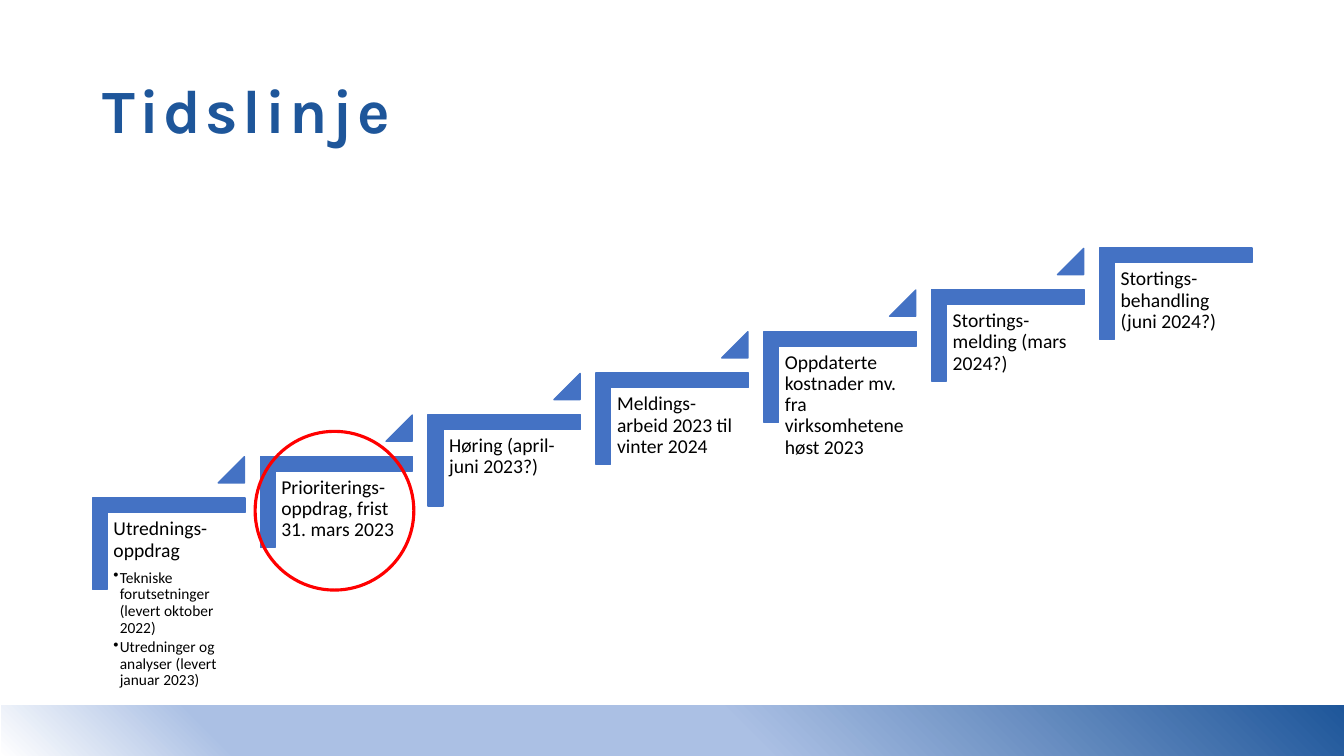
from lxml import etree
from pptx import Presentation
from pptx import util as u
from pptx.dml.color import RGBColor
from pptx.enum import shapes, text
from pptx.oxml import ns

COLORS = {"navy": "1E569A", "pale": "ABC0E4", "white": "FFFFFF",
          "step": "4472C4", "text": "000000", "highlight": "FF0000"}

STEPS = [
    ("Utrednings-oppdrag", ["Tekniske forutsetninger (levert oktober 2022)",
                            "Utredninger og analyser (levert januar 2023)"]),
    ("Prioriterings-oppdrag, frist 31. mars 2023", []),
    ("Høring (april-juni 2023?)", []),
    ("Meldings-arbeid 2023 til vinter 2024", []),
    ("Oppdaterte kostnader mv. fra virksomhetene høst 2023", []),
    ("Stortings-melding (mars 2024?)", []),
    ("Stortings-behandling (juni 2024?)", []),
]
STEP_RIGHT, STEP_UP = 4.23, 1.05  # cm from one step to the next


def color(name):
    return RGBColor.from_string(COLORS[name])


def box(left, top, width, height):
    return [u.Cm(value) for value in (left, top, width, height)]


def add_solid(parent, preset, place, adjustments):
    solid = parent.shapes.add_shape(preset, *box(*place))
    solid.shadow.inherit = False
    for index, value in enumerate(adjustments):
        solid.adjustments[index] = value
    solid.fill.solid()
    solid.fill.fore_color.rgb = color("step")
    solid.line.color.rgb = color("step")
    solid.line.width = u.Pt(1)
    return solid


def format_paragraph(paragraph, size, space_after):
    paragraph.line_spacing = 0.9
    paragraph.space_after = u.Pt(space_after)
    paragraph.font.size = u.Pt(size)
    paragraph.font.name = "Calibri"
    paragraph.font.color.rgb = color("text")


def add_bullet(paragraph):
    properties = paragraph._p.get_or_add_pPr()
    properties.set("marL", str(u.Cm(0.16)))
    properties.set("indent", str(u.Cm(-0.16)))
    etree.SubElement(properties, ns.qn("a:buChar")).set("char", "•")


def add_label(parent, left, top, heading, details):
    frame = parent.shapes.add_textbox(*box(left, top, 3.45, 3.02)).text_frame
    frame.word_wrap = True
    frame.margin_left = frame.margin_right = u.Cm(0.15)
    frame.margin_top = frame.margin_bottom = u.Cm(0.15)
    frame.text = heading
    format_paragraph(frame.paragraphs[0], 14, 6)
    for detail in details:
        paragraph = frame.add_paragraph()
        paragraph.text = detail
        paragraph.level = 1
        add_bullet(paragraph)
        format_paragraph(paragraph, 11, 2)


def add_staircase(slide):
    staircase = slide.shapes.add_group_shape()
    for index, (heading, details) in enumerate(STEPS):
        right, up = index * STEP_RIGHT, index * STEP_UP
        corner = add_solid(staircase, shapes.MSO_SHAPE.CORNER,
                           (3.1 + right, 11.78 - up, 2.3, 3.84), [0.161, 0.161])
        corner.rotation = 90
        add_label(staircase, 2.71 + right, 12.93 - up, heading, details)
        if index < len(STEPS) - 1:
            add_solid(staircase, shapes.MSO_SHAPE.ISOSCELES_TRIANGLE,
                      (5.5 + right, 11.51 - up, 0.66, 0.66), [1])


def add_footer_band(slide):
    band = slide.shapes.add_shape(shapes.MSO_SHAPE.RECTANGLE,
                                  *box(16.31, 1.5, 1.3, 33.86))
    band.rotation = 90
    band.shadow.inherit = False
    band.line.fill.background()
    # Radial gradient spreading from one corner
    band.fill.gradient()
    gradient = band._element.spPr.find(ns.qn("a:gradFill"))
    for child in list(gradient):
        gradient.remove(child)
    gradient.set("rotWithShape", "1")
    stops = etree.SubElement(gradient, ns.qn("a:gsLst"))
    for percent, name in ((0, "navy"), (45, "pale"), (83, "pale"), (100, "white")):
        stop = etree.SubElement(stops, ns.qn("a:gs"), pos=str(percent * 1000))
        etree.SubElement(stop, ns.qn("a:srgbClr"), val=COLORS[name])
    spread = etree.SubElement(gradient, ns.qn("a:path"))
    spread.set("path", "circle")
    etree.SubElement(spread, ns.qn("a:fillToRect"), l="100000", b="100000")


def set_title(slide, wording):
    title = slide.shapes.title
    title.left, title.top, title.width, title.height = box(2.33, 1.01, 29.21, 3.68)
    frame = title.text_frame
    frame.text = wording
    frame.vertical_anchor = text.MSO_ANCHOR.MIDDLE
    paragraph = frame.paragraphs[0]
    paragraph.alignment = text.PP_ALIGN.LEFT
    paragraph.line_spacing = 0.9
    run = paragraph.runs[0]
    run.font.size = u.Pt(44)
    run.font.name = "Karla"
    run.font.bold = True
    run.font.color.rgb = color("navy")
    run._r.get_or_add_rPr().set("spc", "300")


def add_highlight(slide):
    ring = slide.shapes.add_shape(shapes.MSO_SHAPE.OVAL,
                                  *box(6.43, 10.87, 4, 4))
    ring.shadow.inherit = False
    ring.fill.background()
    ring.line.color.rgb = color("highlight")
    ring.line.width = u.Pt(2.25)


def main():
    deck = Presentation()
    deck.slide_width, deck.slide_height = u.Cm(33.87), u.Cm(19.05)
    slide = deck.slides.add_slide(deck.slide_layouts[5])
    # Frame of the slide
    add_footer_band(slide)
    set_title(slide, "Tidslinje")
    # Timeline, with the current step ringed
    add_staircase(slide)
    add_highlight(slide)
    deck.save("out.pptx")


if __name__ == "__main__":
    main()
